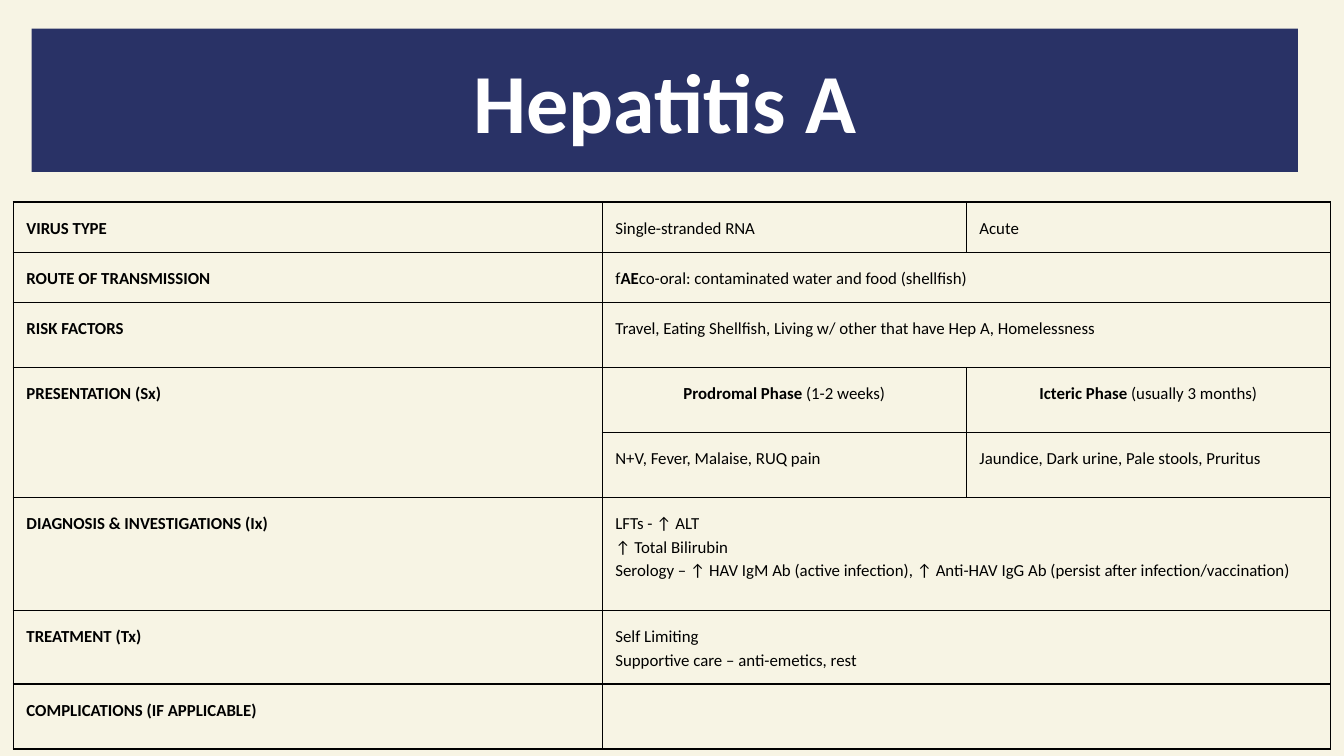
from dataclasses import dataclass

from lxml.etree import SubElement
from pptx import Presentation
from pptx.dml.color import RGBColor
from pptx.enum.shapes import MSO_SHAPE
from pptx.enum.text import MSO_ANCHOR, PP_ALIGN
from pptx.oxml.ns import qn
from pptx.util import Cm, Pt


@dataclass(frozen=True)
class Theme:
    background: str = "F7F4E4"
    banner: str = "293266"
    title: str = "FFFFFF"
    ink: str = "000000"
    font: str = "Calibri"
    title_size: float = 45
    body_size: float = 9
    border_width: float = 0.75
    line_spacing: float = 1.15


THEME = Theme()
INSET = Cm(0.25)
COLUMN_WIDTHS = (11.13, 6.88, 6.88)
BLANK_LAYOUT = 6

# Each row: height in cm, heading, details. Text between ** marks is bold.
# A single detail spans both detail columns; no heading joins the row above.
ROWS = (
    (0.95, "VIRUS TYPE", ("Single-stranded RNA", "Acute")),
    (0.95, "ROUTE OF TRANSMISSION",
     ("f**AE**co-oral: contaminated water and food (shellfish)",)),
    (1.23, "RISK FACTORS",
     ("Travel, Eating Shellfish, Living w/ other that have Hep A, Homelessness",)),
    (1.23, "PRESENTATION (Sx)",
     ("**Prodromal Phase **(1-2 weeks)", "**Icteric Phase **(usually 3 months)")),
    (1.23, None,
     ("N+V, Fever, Malaise, RUQ pain", "Jaundice, Dark urine, Pale stools, Pruritus")),
    (2.13, "DIAGNOSIS & INVESTIGATIONS (Ix)",
     ("LFTs - ↑ ALT\n↑ Total Bilirubin\n"
      "Serology – ↑ HAV IgM Ab (active infection), "
      "↑ Anti-HAV IgG Ab (persist after infection/vaccination)",)),
    (1.38, "TREATMENT (Tx)",
     ("Self Limiting\nSupportive care – anti-emetics, rest",)),
    (1.23, "COMPLICATIONS (IF APPLICABLE)", ("",)),
)


def write_text(text_frame, text, *, size=THEME.body_size, color=THEME.ink,
               align=PP_ALIGN.LEFT, spacing=THEME.line_spacing):
    """Write one paragraph per line, switching bold at each ** mark."""
    for index, line in enumerate(text.split("\n")):
        paragraph = text_frame.add_paragraph() if index else text_frame.paragraphs[0]
        paragraph.alignment = align
        paragraph.line_spacing = spacing
        for position, part in enumerate(line.split("**")):
            if position and not part:
                continue
            run = paragraph.add_run()
            run.text = part
            run.font.name = THEME.font
            run.font.size = Pt(size)
            run.font.bold = position % 2 == 1
            run.font.color.rgb = RGBColor.from_string(color)


def set_insets(target):
    target.margin_left = target.margin_right = INSET
    target.margin_top = target.margin_bottom = INSET


def add_banner(slide, text):
    shape = slide.shapes.add_shape(
        MSO_SHAPE.RECTANGLE, Cm(0.6), Cm(0.54), Cm(23.93), Cm(2.71))
    shape.shadow.inherit = False
    shape.fill.solid()
    shape.fill.fore_color.rgb = RGBColor.from_string(THEME.banner)
    shape.line.fill.background()
    set_insets(shape.text_frame)
    shape.text_frame.word_wrap = True
    shape.text_frame.vertical_anchor = MSO_ANCHOR.MIDDLE
    write_text(shape.text_frame, f"**{text}**", size=THEME.title_size,
               color=THEME.title, align=PP_ALIGN.CENTER, spacing=1.0)


def style_cell(cell):
    """Draw all four borders and leave the cell unfilled."""
    properties = cell._tc.get_or_add_tcPr()
    for side in ("lnL", "lnR", "lnT", "lnB"):
        border = SubElement(properties, qn(f"a:{side}"), w=str(Pt(THEME.border_width)))
        fill = SubElement(border, qn("a:solidFill"))
        SubElement(fill, qn("a:srgbClr"), val=THEME.ink)
    cell.fill.background()
    set_insets(cell)
    cell.vertical_anchor = MSO_ANCHOR.TOP


def add_summary_table(slide):
    frame = slide.shapes.add_table(
        len(ROWS), len(COLUMN_WIDTHS), Cm(0.25), Cm(3.82),
        Cm(sum(COLUMN_WIDTHS)), Cm(sum(height for height, _, _ in ROWS)))
    table = frame.table
    table.first_row = table.horz_banding = False
    for column, width in zip(table.columns, COLUMN_WIDTHS):
        column.width = Cm(width)
    for cell in table.iter_cells():
        style_cell(cell)

    for index, (height, heading, details) in enumerate(ROWS):
        table.rows[index].height = Cm(height)
        if heading:
            write_text(table.cell(index, 0).text_frame, f"**{heading}**")
        else:
            table.cell(index - 1, 0).merge(table.cell(index, 0))
        if len(details) == 1:
            table.cell(index, 1).merge(table.cell(index, 2))
        for column, detail in enumerate(details, start=1):
            # Phase names head their columns, so they are centred
            align = PP_ALIGN.CENTER if detail.startswith("**") else PP_ALIGN.LEFT
            write_text(table.cell(index, column).text_frame, detail, align=align)


def main():
    presentation = Presentation()
    presentation.slide_width = Cm(25.4)
    presentation.slide_height = Cm(14.29)
    slide = presentation.slides.add_slide(presentation.slide_layouts[BLANK_LAYOUT])

    # Background
    slide.background.fill.solid()
    slide.background.fill.fore_color.rgb = RGBColor.from_string(THEME.background)

    # Title and disease summary
    add_banner(slide, "Hepatitis A")
    add_summary_table(slide)

    presentation.save("out.pptx")


if __name__ == "__main__":
    main()
